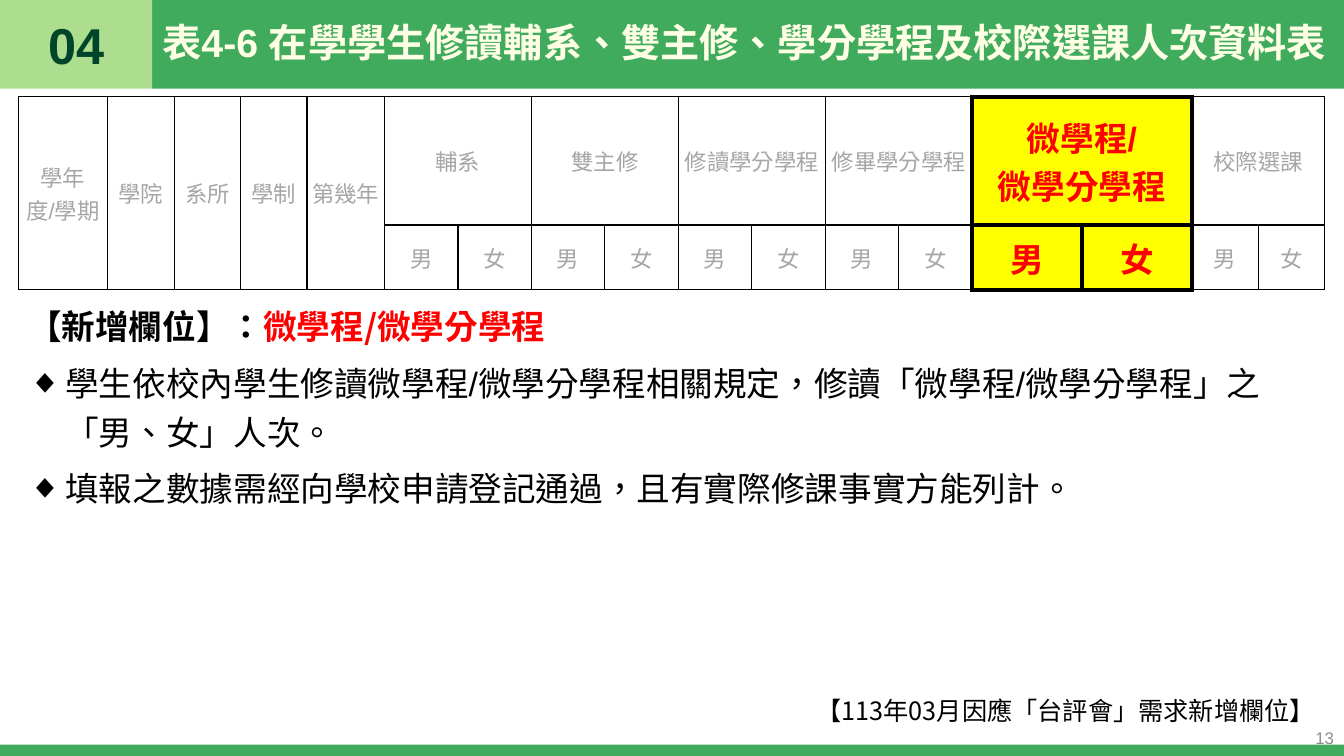
from lxml import etree
from pptx import Presentation
from pptx.dml.color import RGBColor
from pptx.enum.lang import MSO_LANGUAGE_ID
from pptx.enum.shapes import MSO_SHAPE
from pptx.enum.text import MSO_ANCHOR, MSO_AUTO_SIZE, PP_ALIGN
from pptx.oxml.ns import qn
from pptx.util import Inches, Pt

RECTANGLE = MSO_SHAPE.RECTANGLE
MIDDLE = MSO_ANCHOR.MIDDLE
NO_AUTOFIT = MSO_AUTO_SIZE.NONE
LEFT, CENTER, RIGHT = PP_ALIGN.LEFT, PP_ALIGN.CENTER, PP_ALIGN.RIGHT
CHINESE = MSO_LANGUAGE_ID.TRADITIONAL_CHINESE

THEME = {
    "latin": "Arial", "chinese": "Noto Sans CJK SC",
    "green": "41AB5D", "light_green": "ADDD8E", "dark_green": "004529",
    "cream": "FFFFE5", "yellow": "FFFF00", "red": "FF0000",
    "black": "000000", "grey": "A6A6A6", "number_grey": "8C8C8C",
    "section": 36, "title": 28, "body": 24, "note": 18, "cell": 16, "number": 12,
    "thin": 1, "thick": 3,
}

presentation = Presentation()
presentation.slide_width, presentation.slide_height = Inches(13.33), Inches(7.5)
slide = presentation.slides.add_slide(presentation.slide_layouts[5])


def area(left, top, width, height):
    """Turn percentages of the slide into a position and a size."""
    slide_width, slide_height = presentation.slide_width, presentation.slide_height
    return (int(slide_width * left / 100), int(slide_height * top / 100),
            int(slide_width * width / 100), int(slide_height * height / 100))


def format_paragraph(paragraph, size, color, bold=False, align=LEFT, before=0,
                     spacing=1.0, latin="latin"):
    paragraph.alignment = align
    paragraph.line_spacing = spacing
    paragraph.space_before = Pt(before)
    for run in paragraph.runs:
        font = run.font
        font.name, font.size, font.bold = THEME[latin], Pt(THEME[size]), bold
        font.color.rgb = RGBColor.from_string(THEME[color])
        font.language_id = CHINESE
        east_asian = etree.Element(qn("a:ea"), typeface=THEME["chinese"])
        font._element.find(qn("a:latin")).addnext(east_asian)


# Header bands and bottom strip
BAND_HEIGHT, SECTION_WIDTH = 11.73, 11.33
bands = []
for color, place in (
    ("green", (0, 98.5, 100, 1.5)),
    ("green", (SECTION_WIDTH, 0, 100 - SECTION_WIDTH, BAND_HEIGHT)),
    ("light_green", (0, 0, SECTION_WIDTH, BAND_HEIGHT)),
):
    band = slide.shapes.add_shape(RECTANGLE, *area(*place))
    band.shadow.inherit = False
    band.fill.solid()
    band.fill.fore_color.rgb = RGBColor.from_string(THEME[color])
    band.line.fill.background()
    bands.append(band)

section_frame = bands[-1].text_frame
section_frame.text = "04"
section_frame.vertical_anchor = MIDDLE
format_paragraph(section_frame.paragraphs[0], "section", "dark_green", True, CENTER)

# Title, brought in front of its band
title = slide.shapes.title
title.left, title.top, title.width, title.height = area(
    SECTION_WIDTH, 0, 100 - SECTION_WIDTH, BAND_HEIGHT)
slide.shapes.element.append(title.element)
title_frame = title.text_frame
title_frame.text = "表4-6 在學學生修讀輔系、雙主修、學分學程及校際選課人次資料表"
title_frame.vertical_anchor = MIDDLE
title_frame.auto_size = NO_AUTOFIT
format_paragraph(title_frame.paragraphs[0], "title", "cream", True, spacing=0.9)

# Table: single columns span both rows, groups split into two genders
SINGLES = ["學年度/學期", "學院", "系所", "學制", "第幾年"]
GROUPS = ["輔系", "雙主修", "修讀學分學程", "修畢學分學程", "微學程/\v微學分學程", "校際選課"]
GENDERS = ["男", "女"]
COLUMN_WEIGHTS = [0.89] + [0.66] * 3 + [0.77] + [0.73] * 8 + [1.09] * 2 + [0.66] * 2
ROW_WEIGHTS = [2, 1]
NEW_COLUMNS = (13, 14)

table_area = area(1.35, 12.8, 97.22, 25.47)
table = slide.shapes.add_table(
    len(ROW_WEIGHTS), len(COLUMN_WEIGHTS), *table_area).table
table.first_row = table.horz_banding = False
for column, weight in zip(table.columns, COLUMN_WEIGHTS):
    column.width = int(table_area[2] * weight / sum(COLUMN_WEIGHTS))
for row, weight in zip(table.rows, ROW_WEIGHTS):
    row.height = int(table_area[3] * weight / sum(ROW_WEIGHTS))

for index, label in enumerate(SINGLES):
    table.cell(0, index).merge(table.cell(1, index))
    table.cell(0, index).text = label
for index, label in enumerate(GROUPS):
    first = len(SINGLES) + 2 * index
    table.cell(0, first).merge(table.cell(0, first + 1))
    table.cell(0, first).text = label
    for offset, gender in enumerate(GENDERS):
        table.cell(1, first + offset).text = gender

# Cell text, borders and fills; the new columns stand out
for row_index in range(len(ROW_WEIGHTS)):
    for column_index in range(len(COLUMN_WEIGHTS)):
        cell = table.cell(row_index, column_index)
        is_new = column_index in NEW_COLUMNS
        cell.margin_left = cell.margin_right = Inches(0.02)
        cell.margin_top = cell.margin_bottom = 0
        cell.vertical_anchor = MIDDLE
        format_paragraph(
            cell.text_frame.paragraphs[0], "body" if is_new else "cell",
            "red" if is_new else "grey", is_new, CENTER,
            before=6 if column_index < len(SINGLES) else 0)
        properties = cell._tc.get_or_add_tcPr()
        for side, neighbour in (("L", -1), ("R", 1), ("T", 0), ("B", 0)):
            thick = is_new or column_index + neighbour in NEW_COLUMNS
            width = Pt(THEME["thick" if thick else "thin"])
            border = etree.SubElement(properties, qn(f"a:ln{side}"), w=str(width))
            paint = etree.SubElement(border, qn("a:solidFill"))
            etree.SubElement(paint, qn("a:srgbClr"), val=THEME["black"])
        if is_new:
            cell.fill.solid()
            cell.fill.fore_color.rgb = RGBColor.from_string(THEME["yellow"])
        else:
            cell.fill.background()

# Explanation of the new column
body_frame = slide.shapes.add_textbox(*area(1.35, 39.33, 97.22, 30)).text_frame
body_frame.word_wrap = True
heading = body_frame.paragraphs[0]
heading.text = "【新增欄位】："
heading.add_run().text = "微學程/微學分學程"
format_paragraph(heading, "body", "black", True, before=6, spacing=1.1, latin="chinese")
heading.runs[1].font.color.rgb = RGBColor.from_string(THEME["red"])

for rule in (
    "學生依校內學生修讀微學程/微學分學程相關規定，修讀「微學程/微學分學程」之「男、女」人次。",
    "填報之數據需經向學校申請登記通過，且有實際修課事實方能列計。",
):
    paragraph = body_frame.add_paragraph()
    paragraph.text = rule
    format_paragraph(paragraph, "body", "black", before=6, spacing=1.2)
    properties = paragraph._p.get_or_add_pPr()
    properties.set("marL", str(Inches(0.37)))
    properties.set("indent", str(-Inches(0.37)))
    etree.SubElement(properties, qn("a:buFont"), typeface=THEME["latin"])
    etree.SubElement(properties, qn("a:buChar"), char="◆")

# Closing note and slide number
for text, place, size, color, latin in (
    ("【113年03月因應「台評會」需求新增欄位】", (50, 90.8, 48.57, 6.4),
     "note", "black", "chinese"),
    ("13", (77.5, 94.9, 22.5, 5.33), "number", "number_grey", "latin"),
):
    frame = slide.shapes.add_textbox(*area(*place)).text_frame
    frame.word_wrap = True
    frame.vertical_anchor = MIDDLE
    frame.text = text
    format_paragraph(frame.paragraphs[0], size, color, align=RIGHT, latin=latin)

presentation.save("out.pptx")
